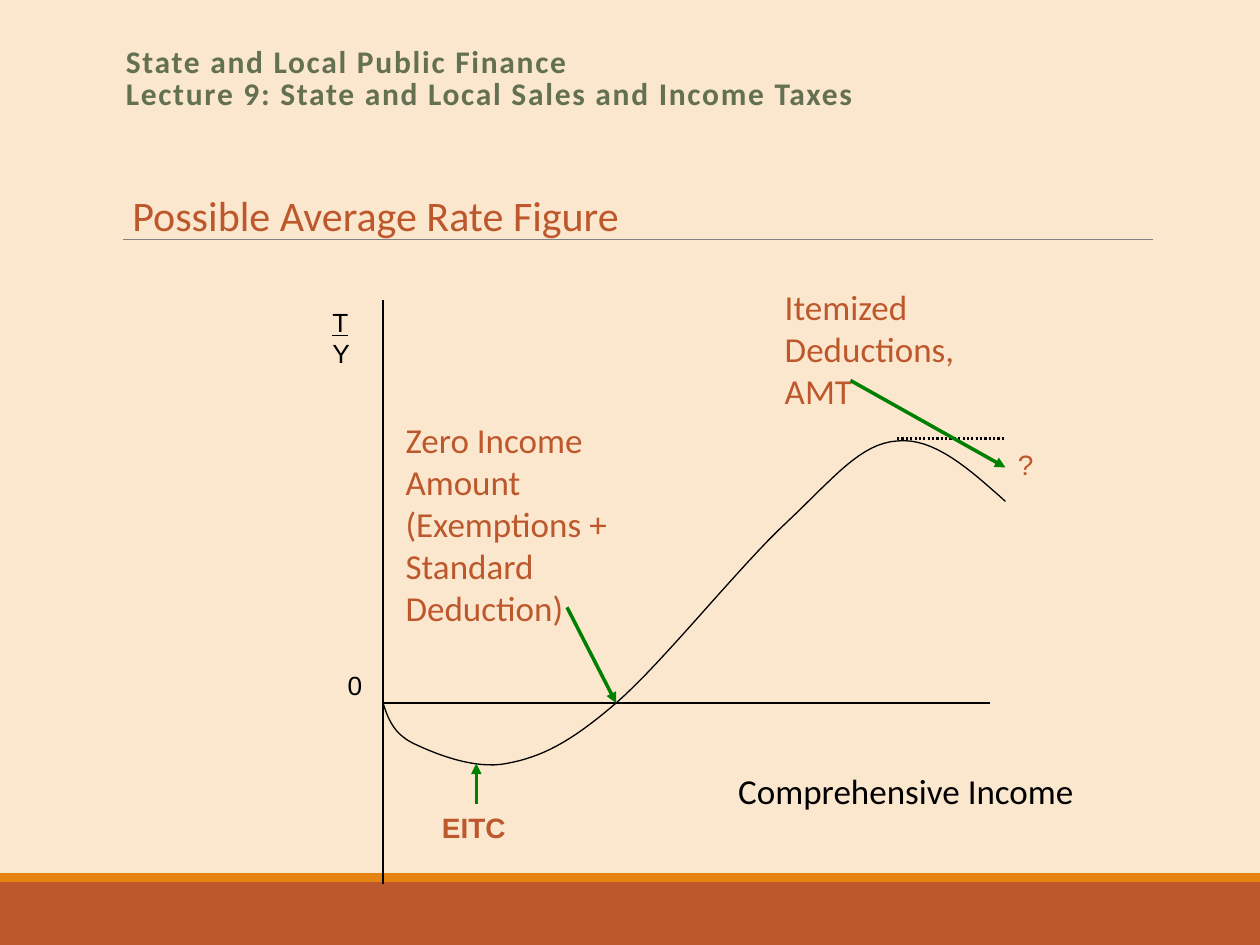
from pptx import Presentation
from pptx.dml.color import RGBColor
from pptx.enum.dml import MSO_LINE_DASH_STYLE as Dash
from pptx.enum.shapes import MSO_CONNECTOR as Conn, MSO_SHAPE as Shape
from pptx.enum.text import MSO_ANCHOR as Anchor, MSO_AUTO_SIZE as AutoSize, PP_ALIGN as Align
from pptx.oxml.ns import qn
from pptx.util import Inches, Pt
from lxml.etree import SubElement

COLORS = {
    "background": "FBE6CE",
    "rust": "BD582C",
    "orange": "E48312",
    "rule": "808080",
    "black": "000000",
    "green": "008000",
    "olive": "637052",
}

# Axes: origin and ends, in inches
ORIGIN_X, ORIGIN_Y = 3.04, 5.58
AXIS_TOP, AXIS_BOTTOM, AXIS_RIGHT = 2.38, 7.02, 7.86
ZERO_RATE_X = 4.89

# Average rate curve: start point, then two control points and an end per segment
CURVE = [
    (ORIGIN_X, ORIGIN_Y),
    (3.08, 5.7), (3.12, 5.82), (3.28, 5.9),
    (3.45, 5.98), (3.76, 6.11), (4.02, 6.06),
    (4.29, 6.01), (4.52, 5.9), (ZERO_RATE_X, ORIGIN_Y),
    (5.26, 5.26), (5.88, 4.48), (6.25, 4.14),
    (6.62, 3.79), (6.83, 3.52), (7.12, 3.5),
    (7.41, 3.47), (7.69, 3.72), (7.98, 3.98),
]


def rgb(name):
    return RGBColor.from_string(COLORS[name])


def style_text(tf, text, size, color, font="Calibri", bold=False):
    tf.text = text
    tf.word_wrap = True
    tf.auto_size = AutoSize.NONE
    tf.vertical_anchor = Anchor.TOP
    for p in tf.paragraphs:
        p.alignment = Align.LEFT
        for r in p.runs:
            r.font.size = Pt(size)
            r.font.name = font
            r.font.bold = bold
            r.font.color.rgb = rgb(color)


def add_label(slide, box, text, size, color, font="Calibri", bold=False):
    sp = slide.shapes.add_textbox(*map(Inches, box))
    style_text(sp.text_frame, text, size, color, font, bold)
    return sp.text_frame


def add_band(slide, top, height, color):
    sp = slide.shapes.add_shape(Shape.RECTANGLE, 0, Inches(top), Inches(10), Inches(height))
    sp.shadow.inherit = False
    sp.fill.solid()
    sp.fill.fore_color.rgb = rgb(color)
    sp.line.fill.background()


def add_line(slide, start, end, color="black", width=0.75, dash=None, arrow=False):
    line = slide.shapes.add_connector(Conn.STRAIGHT, *map(Inches, (*start, *end)))
    line.line.color.rgb = rgb(color)
    line.line.width = Pt(width)
    if dash:
        line.line.dash_style = dash
    if arrow:
        SubElement(line.line._get_or_add_ln(), qn("a:tailEnd"), type="triangle")
    SubElement(line._element.spPr, qn("a:effectLst"))


def bezier_points(points, steps=16):
    """Sample a chain of cubic segments, leaving out the start point."""
    for i in range(0, len(points) - 1, 3):
        segment = points[i:i + 4]
        for step in range(1, steps + 1):
            t = step / steps
            weights = ((1 - t) ** 3, 3 * t * (1 - t) ** 2, 3 * t ** 2 * (1 - t), t ** 3)
            yield tuple(sum(w * pt[axis] for w, pt in zip(weights, segment)) for axis in (0, 1))


def add_curve(slide, points):
    # The builder rounds to whole units, so points are given as full lengths
    start_x, start_y = map(Inches, points[0])
    builder = slide.shapes.build_freeform(start_x, start_y)
    builder.add_line_segments([(Inches(x), Inches(y)) for x, y in bezier_points(points)],
                              close=False)
    sp = builder.convert_to_shape()
    sp.shadow.inherit = False
    sp.fill.background()
    sp.line.color.rgb = rgb("black")
    sp.line.width = Pt(0.75)


def add_title(slide, text):
    title = slide.shapes.title
    title.left, title.top, title.width, title.height = map(Inches, (1.05, 1.5, 5.06, 0.38))
    tf = title.text_frame
    style_text(tf, text, 24, "rust")
    tf.margin_left = tf.margin_right = 0
    tf.paragraphs[0].line_spacing = 0.9


def add_lecture_heading(slide):
    text = "State and Local Public Finance\vLecture 9: State and Local Sales and Income Taxes"
    tf = add_label(slide, (0.9, 0.33, 8.25, 0.65), text, 18, "olive", bold=True)
    p = tf.paragraphs[0]
    p.line_spacing = 0.85
    for r in p.runs:
        r.font._element.set("spc", "100")


def add_figure(slide):
    # Axes and their labels
    add_line(slide, (ORIGIN_X, AXIS_TOP), (ORIGIN_X, AXIS_BOTTOM))
    add_line(slide, (ORIGIN_X, ORIGIN_Y), (AXIS_RIGHT, ORIGIN_Y))
    add_label(slide, (5.76, 6.06, 3.09, 0.64), "Comprehensive Income", 20, "black")
    ratio = add_label(slide, (2.54, 2.38, 0.49, 0.96), "T\nY", 15, "black", "Arial")
    ratio.paragraphs[0].runs[0].font.underline = True
    add_label(slide, (2.66, 5.26, 0.25, 0.64), "0", 15, "black", "Arial")

    # Curve and the level at its peak
    add_curve(slide, CURVE)
    add_line(slide, (7.12, 3.48), (7.98, 3.48), width=1.25, dash=Dash.ROUND_DOT)

    # Notes on the curve
    add_label(slide, (6.13, 2.22, 1.86, 0.8), "Itemized Deductions,\nAMT", 20, "rust")
    add_label(slide, (3.12, 3.27, 1.92, 1.28),
              "Zero Income Amount (Exemptions + Standard Deduction)", 20, "rust")
    add_label(slide, (3.41, 6.38, 1.24, 0.48), "EITC", 16, "rust", "Arial", bold=True)
    add_label(slide, (7.98, 3.5, 0.25, 0.64), "?", 16, "rust", "Arial")

    # Arrows from the notes to the curve
    for start, end in (
        ((3.78, 6.38), (3.78, 6.06)),
        ((4.5, 4.82), (ZERO_RATE_X, ORIGIN_Y)),
        ((6.75, 3.02), (7.98, 3.71)),
    ):
        add_line(slide, start, end, "green", 2, arrow=True)


def main():
    prs = Presentation()
    prs.slide_width, prs.slide_height = Inches(10), Inches(7.5)
    slide = prs.slides.add_slide(prs.slide_layouts[5])
    slide.background.fill.solid()
    slide.background.fill.fore_color.rgb = rgb("background")

    # Footer bands and title rule
    add_band(slide, 7, 0.5, "rust")
    add_band(slide, 6.93, 0.07, "orange")
    add_line(slide, (0.98, 1.9), (9.15, 1.9), "rule", 0.5)

    add_title(slide, "Possible Average Rate Figure")
    add_figure(slide)
    add_lecture_heading(slide)
    prs.save("out.pptx")


if __name__ == "__main__":
    main()
